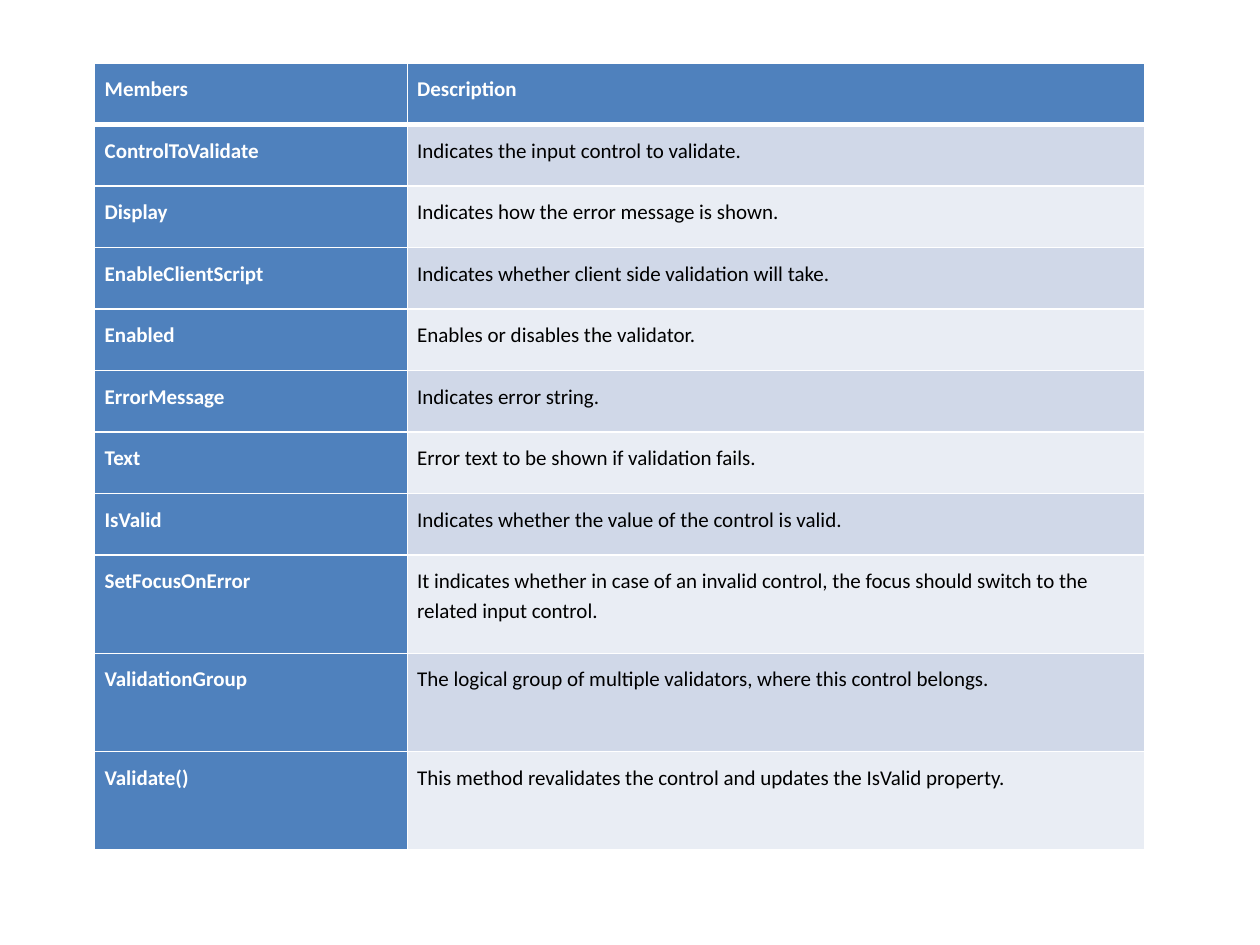
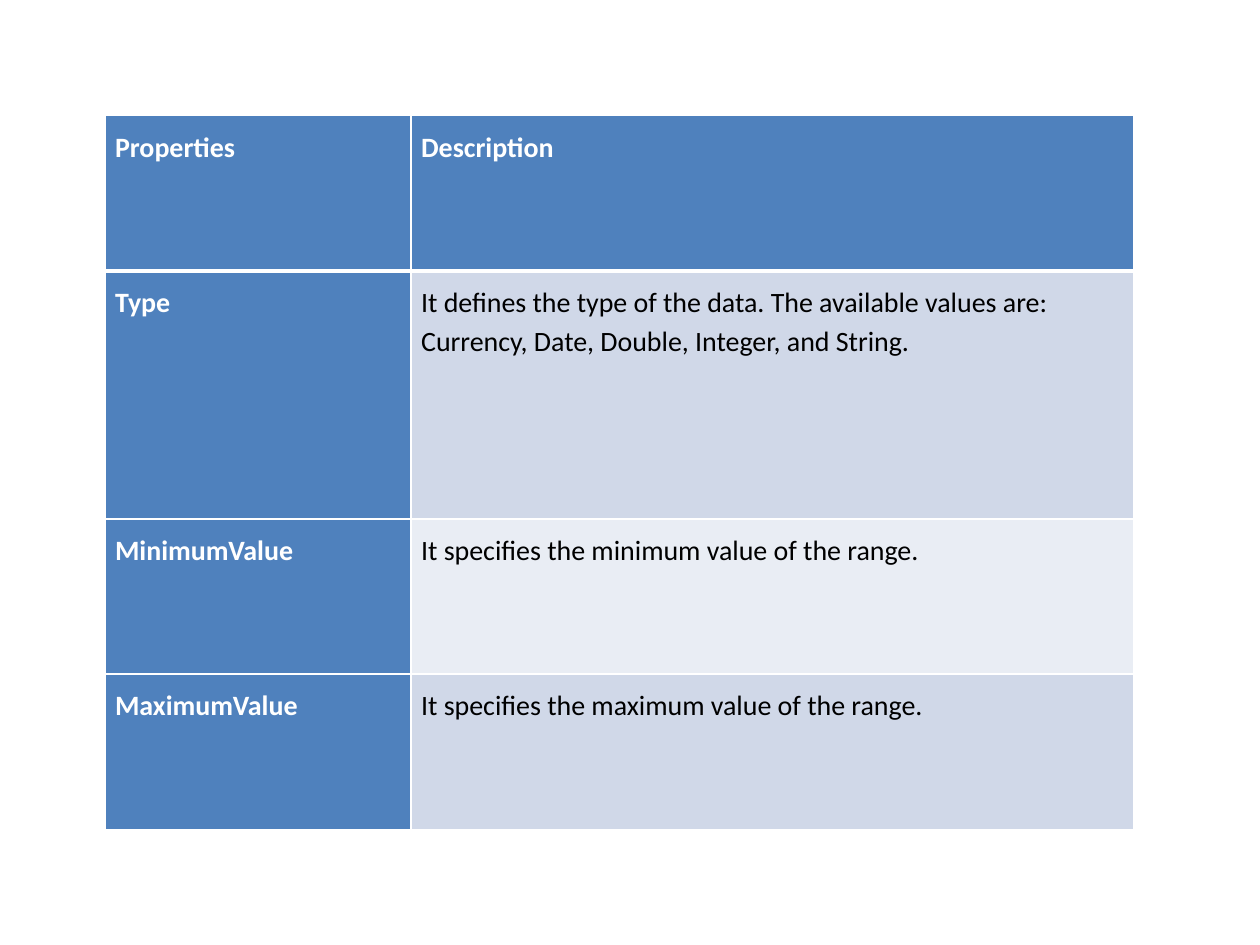
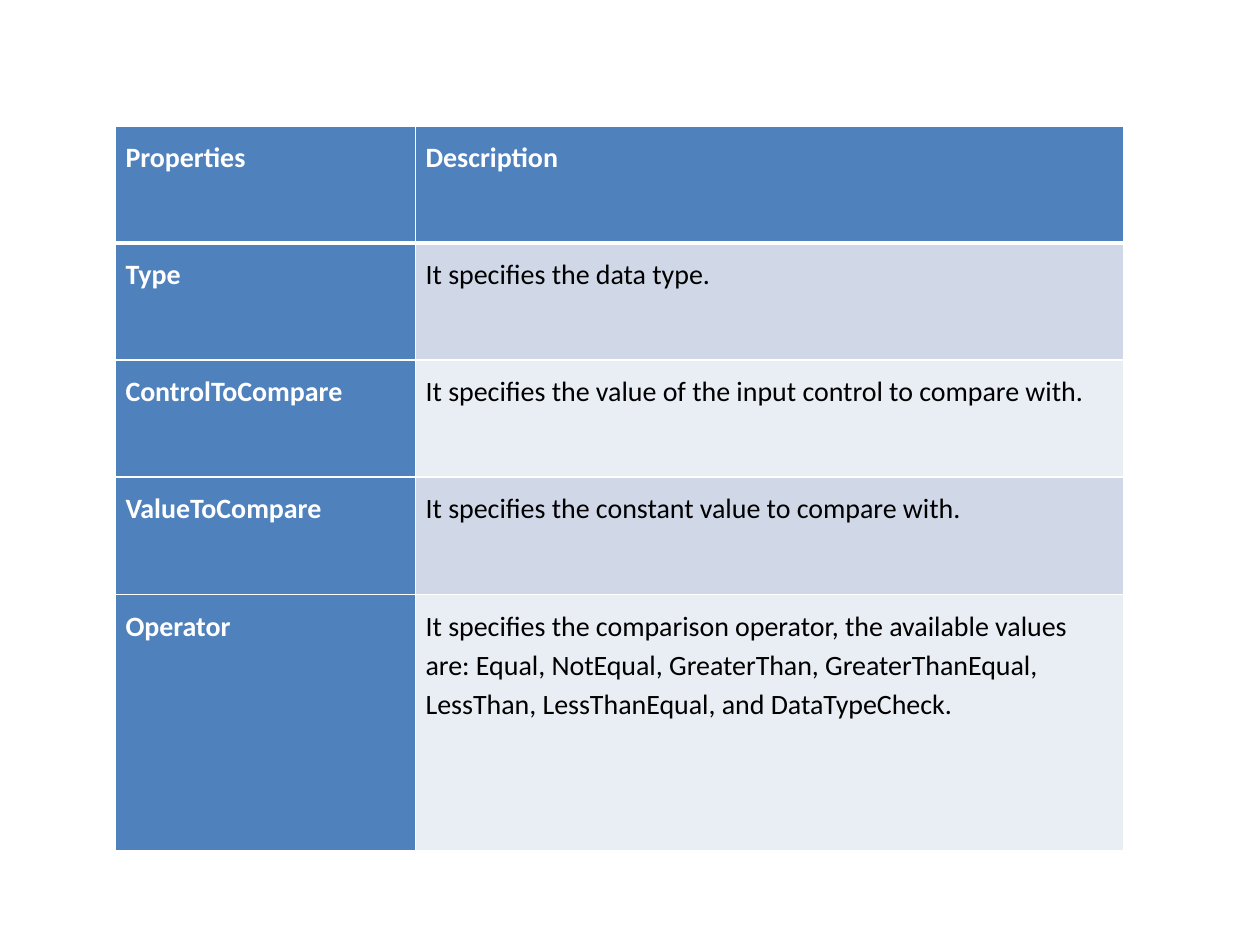
from lxml.etree import SubElement as Sub
from pptx import Presentation
from pptx.dml.color import RGBColor as RGB
from pptx.oxml.ns import qn
from pptx.util import Cm, Pt

# Shared style
WHITE = RGB(0xFF, 0xFF, 0xFF)
BLACK = RGB(0x00, 0x00, 0x00)
BLUE = RGB(0x4F, 0x81, 0xBD)
BANDS = [RGB(0xE9, 0xED, 0xF4), RGB(0xD0, 0xD8, 0xE8)]
FONT = "Calibri"
PAD = Cm(0.2)
THIN, THICK = Pt(1), Pt(3)

# Text of the tables, header row first
MEMBERS = [
    ("Members", "Description"),
    ("ControlToValidate", "Indicates the input control to validate."),
    ("Display", "Indicates how the error message is shown."),
    ("EnableClientScript", "Indicates whether client side validation will take."),
    ("Enabled", "Enables or disables the validator."),
    ("ErrorMessage", "Indicates error string."),
    ("Text", "Error text to be shown if validation fails."),
    ("IsValid", "Indicates whether the value of the control is valid."),
    ("SetFocusOnError", "It indicates whether in case of an invalid control, "
     "the focus should switch to the related input control."),
    ("ValidationGroup", "The logical group of multiple validators, "
     "where this control belongs."),
    ("Validate()", "This method revalidates the control and updates "
     "the IsValid property."),
]
RANGE = [
    ("Properties", "Description"),
    ("Type", "It defines the type of the data. The available values are: "
     "Currency, Date, Double, Integer, and String."),
    ("MinimumValue", "It specifies the minimum value of the range."),
    ("MaximumValue", "It specifies the maximum value of the range."),
]
COMPARE = [
    ("Properties", "Description"),
    ("Type", "It specifies the data type."),
    ("ControlToCompare", "It specifies the value of the input control to compare with."),
    ("ValueToCompare", "It specifies the constant value to compare with."),
    ("Operator", "It specifies the comparison operator, the available values are: "
     "Equal, NotEqual, GreaterThan, GreaterThanEqual, LessThan, LessThanEqual, "
     "and DataTypeCheck."),
]

# Text, left, top, column widths, row heights (cm) and type size of each slide
PAGES = [
    (MEMBERS, 1.91, 1.27, (6.3, 14.86), [1.24] * 8 + [1.98] * 3, 12),
    (RANGE, 2.12, 2.33, (6.17, 14.57), [3.13, 5, 3.13, 3.13], 16),
    (COMPARE, 2.33, 2.54, (6.05, 14.27), [2.36] * 4 + [5.17], 16),
]


def edge(cell, top, base):
    """Draw white borders; they must come before the fill."""
    props = cell._tc.get_or_add_tcPr()
    for side, wide in zip("LRTB", (THIN, THIN, top, base)):
        line = Sub(props, qn(f"a:ln{side}"), w=str(wide))
        fill = Sub(line, qn("a:solidFill"))
        Sub(fill, qn("a:srgbClr"), val=str(WHITE))


def write(cell, text, size, color, bold):
    cell.margin_left = cell.margin_right = PAD
    cell.margin_top = cell.margin_bottom = PAD
    para = cell.text_frame.paragraphs[0]
    para.line_spacing = 1.15
    para.space_after = Pt(15)
    run = para.add_run()
    run.text = text
    run.font.name = FONT
    run.font.size = Pt(size)
    run.font.bold = bold
    run.font.color.rgb = color


deck = Presentation()
deck.slide_width, deck.slide_height = Cm(25.4), Cm(19.05)

for rows, left, top, wides, highs, size in PAGES:
    slide = deck.slides.add_slide(deck.slide_layouts[6])
    frame = slide.shapes.add_table(len(rows), 2, Cm(left), Cm(top),
                                   Cm(sum(wides)), Cm(sum(highs)))
    table = frame.table
    table.first_col = True

    # Grid
    for col, wide in zip(table.columns, wides):
        col.width = Cm(wide)
    for row, high in zip(table.rows, highs):
        row.height = Cm(high)

    # Cells: blue header row and first column, banded body
    for r, texts in enumerate(rows):
        for c, text in enumerate(texts):
            cell = table.cell(r, c)
            head = r == 0 or c == 0
            edge(cell, THICK if r == 1 else THIN, THICK if r == 0 else THIN)
            cell.fill.solid()
            cell.fill.fore_color.rgb = BLUE if head else BANDS[r % 2]
            write(cell, text, size, WHITE if head else BLACK, head)

deck.save("out.pptx")
